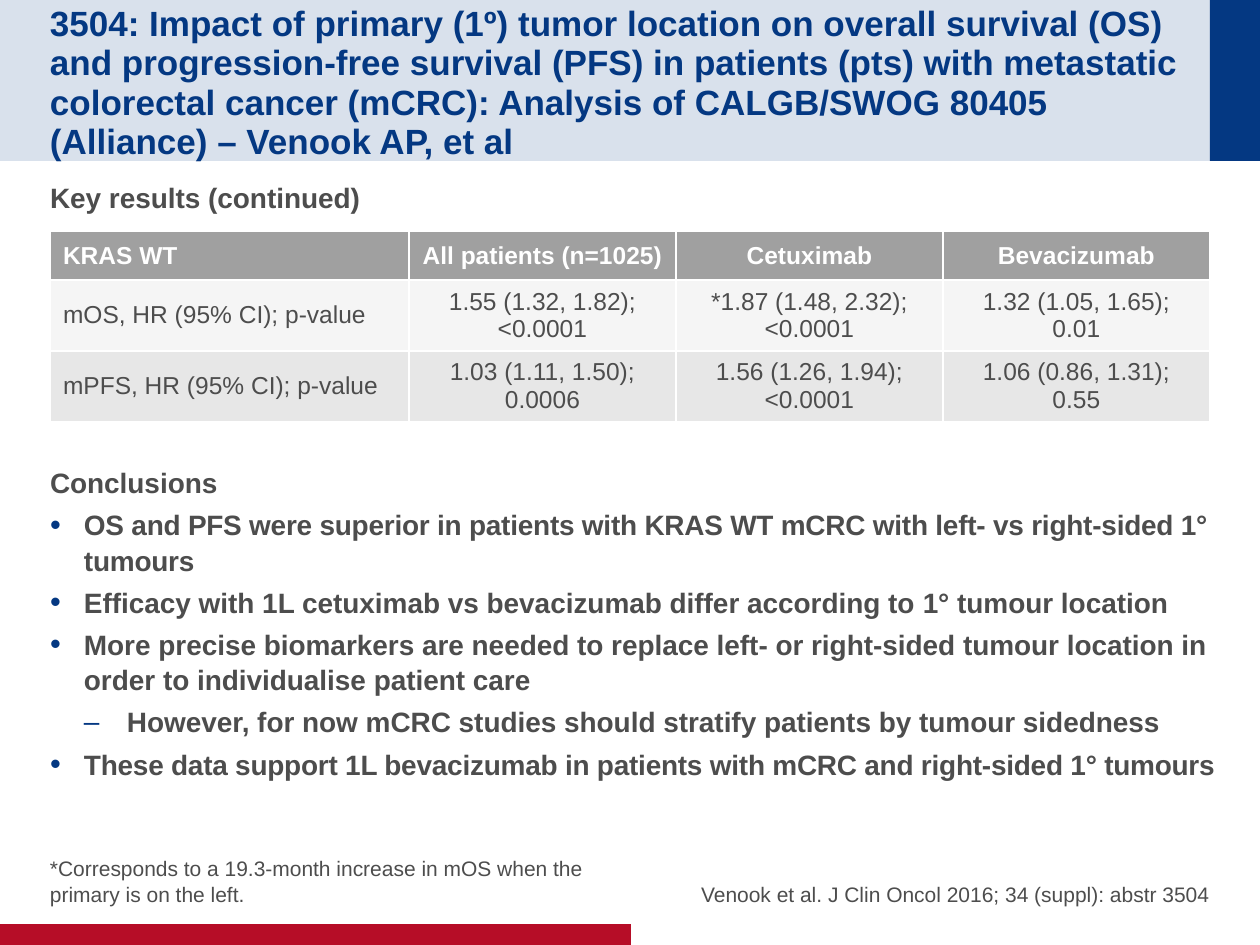
from pptx import Presentation
from pptx.dml.color import RGBColor
from pptx.enum.shapes import MSO_SHAPE
from pptx.enum.text import MSO_ANCHOR, PP_ALIGN
from pptx.oxml.ns import qn
from pptx.util import Emu, Pt
from lxml.etree import SubElement

SCALE = 914400 / 126
NAVY, PALE_BLUE, RED = "043882", "D9E1EC", "B60D27"
TEXT, WHITE, HEADER = "4D4D4D", "FFFFFF", "A0A0A0"
ROW_FILLS = [HEADER, "F5F5F5", "E7E7E7"]

TITLE = (
    "3504: Impact of primary (1º) tumor location on overall survival (OS) and "
    "progression-free survival (PFS) in patients (pts) with metastatic colorectal "
    "cancer (mCRC): Analysis of CALGB/SWOG 80405 (Alliance) – Venook AP, et al"
)
RESULTS = [
    ["KRAS WT", "All patients (n=1025)", "Cetuximab", "Bevacizumab"],
    ["mOS, HR (95% CI); p-value", "1.55 (1.32, 1.82);\n<0.0001",
     "*1.87 (1.48, 2.32);\n<0.0001", "1.32 (1.05, 1.65);\n0.01"],
    ["mPFS, HR (95% CI); p-value", "1.03 (1.11, 1.50);\n0.0006",
     "1.56 (1.26, 1.94);\n<0.0001", "1.06 (0.86, 1.31);\n0.55"],
]
CONCLUSIONS = [
    ("•", [("OS and PFS were superior in patients with KRAS WT mCRC with left- vs "
            "right-sided 1° tumours", -10)]),
    ("•", [("Efficacy with 1L cetuximab vs bevacizumab differ according to", 0),
           (" 1°", -10), (" tumour location", 0)]),
    ("•", [("More precise biomarkers are needed to replace left- or right-sided tumour "
            "location in order to individualise patient care", 0)]),
    ("–", [("However, for now mCRC studies should stratify patients by tumour "
            "sidedness", 0)]),
    ("•", [("These data support 1L bevacizumab in patients with mCRC and right-sided "
            "1° tumours", -10)]),
]


def px(length):
    """Turn pixels into EMU."""
    return Emu(round(length * SCALE))


def color(value):
    """Turn a hex string into a colour."""
    return RGBColor.from_string(value)


def add_rectangle(slide, box, fill):
    """Draw a plain filled rectangle."""
    shape = slide.shapes.add_shape(MSO_SHAPE.RECTANGLE, *map(px, box))
    shape.shadow.inherit = False
    shape.fill.solid()
    shape.fill.fore_color.rgb = color(fill)
    shape.line.fill.background()


def add_text_frame(slide, box, anchor=MSO_ANCHOR.TOP, top=0, bottom=0):
    """Add a wrapping text box and return its frame."""
    frame = slide.shapes.add_textbox(*map(px, box)).text_frame
    frame.word_wrap = True
    frame.vertical_anchor = anchor
    frame.margin_left = frame.margin_right = 0
    frame.margin_top, frame.margin_bottom = px(top), px(bottom)
    return frame


def add_run(paragraph, text, size, hue=TEXT, bold=False, tracking=0):
    """Append one formatted run."""
    run = paragraph.add_run()
    run.text = text
    run.font.name = "Arial"
    run.font.size = Pt(size)
    run.font.bold = bold
    run.font.color.rgb = color(hue)
    if tracking:
        run.font._element.set("spc", str(tracking))


def set_bullet(paragraph, mark):
    """Give a paragraph its mark and hanging indent."""
    sub = mark == "–"
    paragraph.level = int(sub)
    properties = paragraph._p.get_or_add_pPr()
    properties.set("marL", str(px(77 if sub else 34)))
    properties.set("indent", str(-px(43 if sub else 34)))
    bullet_color = SubElement(properties, qn("a:buClr"))
    SubElement(bullet_color, qn("a:srgbClr"), val=NAVY)
    SubElement(properties, qn("a:buSzPct"), val="100000" if sub else "110000")
    SubElement(properties, qn("a:buFont"), typeface="Arial")
    SubElement(properties, qn("a:buChar"), char=mark)


def add_header(slide, left, top, width, height):
    """Draw the title band with its end block and title."""
    block = 50
    add_rectangle(slide, (left, top, width, height), PALE_BLUE)
    add_rectangle(slide, (left + width - block, top, block, height), NAVY)
    box = (left + 50, top + 25, width - 125, height - 50)
    paragraph = add_text_frame(slide, box, MSO_ANCHOR.MIDDLE, top=6).paragraphs[0]
    paragraph.line_spacing = 0.94
    add_run(paragraph, TITLE, 20, NAVY, bold=True)


def add_section(slide, box, heading, bullets=()):
    """Write a bold heading followed by its bullets."""
    frame = add_text_frame(slide, box, top=6, bottom=6)
    add_run(frame.paragraphs[0], heading, 16, bold=True)
    for mark, runs in bullets:
        paragraph = frame.add_paragraph()
        for text, tracking in runs:
            add_run(paragraph, text, 16, bold=True, tracking=tracking)
    for paragraph in frame.paragraphs:
        paragraph.line_spacing = 1.05
        paragraph.space_after = Pt(4)
    for paragraph, (mark, runs) in zip(frame.paragraphs[1:], bullets):
        set_bullet(paragraph, mark)


def style_cell(cell, fill):
    """Set white rules above and below a cell, and its fill."""
    properties = cell._tc.get_or_add_tcPr()
    for side in ("a:lnT", "a:lnB"):
        line = SubElement(properties, qn(side), w=str(Pt(1)))
        SubElement(SubElement(line, qn("a:solidFill")), qn("a:srgbClr"), val=WHITE)
    cell.fill.solid()
    cell.fill.fore_color.rgb = color(fill)
    cell.vertical_anchor = MSO_ANCHOR.MIDDLE
    cell.margin_left = cell.margin_right = px(13)
    cell.margin_top = cell.margin_bottom = px(6)


def add_results_table(slide, left, top, width, height):
    """Build the table with a wide label column and three equal ones."""
    value_width, header_height = 267, 49
    row_height = (height - header_height) // 2
    box = map(px, (left, top, width, height))
    table = slide.shapes.add_table(len(RESULTS), len(RESULTS[0]), *box).table
    for index, column in enumerate(table.columns):
        column.width = px(value_width if index else width - 3 * value_width)
    for row_index, (row, values) in enumerate(zip(table.rows, RESULTS)):
        row.height = px(row_height if row_index else header_height)
        for column_index, (cell, value) in enumerate(zip(row.cells, values)):
            style_cell(cell, ROW_FILLS[row_index])
            paragraph = cell.text_frame.paragraphs[0]
            paragraph.alignment = PP_ALIGN.CENTER if column_index else PP_ALIGN.LEFT
            for line_index, line in enumerate(value.split("\n")):
                if line_index:
                    paragraph.add_line_break()
                add_run(paragraph, line, 14, TEXT if row_index else WHITE, not row_index)


def add_footer(slide, left, top, width, height):
    """Write the footnote and citation above the red strip."""
    notes = [
        (50, "*Corresponds to a 19.3-month increase in mOS when the primary is on the left.",
         PP_ALIGN.LEFT),
        (640, "Venook et al. J Clin Oncol 2016; 34 (suppl): abstr 3504", PP_ALIGN.RIGHT),
    ]
    for offset, text, alignment in notes:
        box = (left + offset, top, 570, height - 38)
        paragraph = add_text_frame(slide, box, MSO_ANCHOR.BOTTOM).paragraphs[0]
        paragraph.alignment = alignment
        paragraph.line_spacing = 1.04
        add_run(paragraph, text, 12)
    add_rectangle(slide, (left, top + height - 21, width // 2 + 1, 21), RED)


def main():
    """Build and save the slide."""
    presentation = Presentation()
    presentation.slide_width, presentation.slide_height = px(1260), px(945)
    slide = presentation.slides.add_slide(presentation.slide_layouts[6])
    add_header(slide, 0, 0, 1260, 161)
    add_section(slide, (50, 173, 1178, 48), "Key results (continued)")
    add_results_table(slide, 50, 231, 1160, 185)
    add_section(slide, (50, 458, 1178, 368), "Conclusions", CONCLUSIONS)
    add_footer(slide, 0, 840, 1260, 105)
    presentation.save("out.pptx")


if __name__ == "__main__":
    main()
